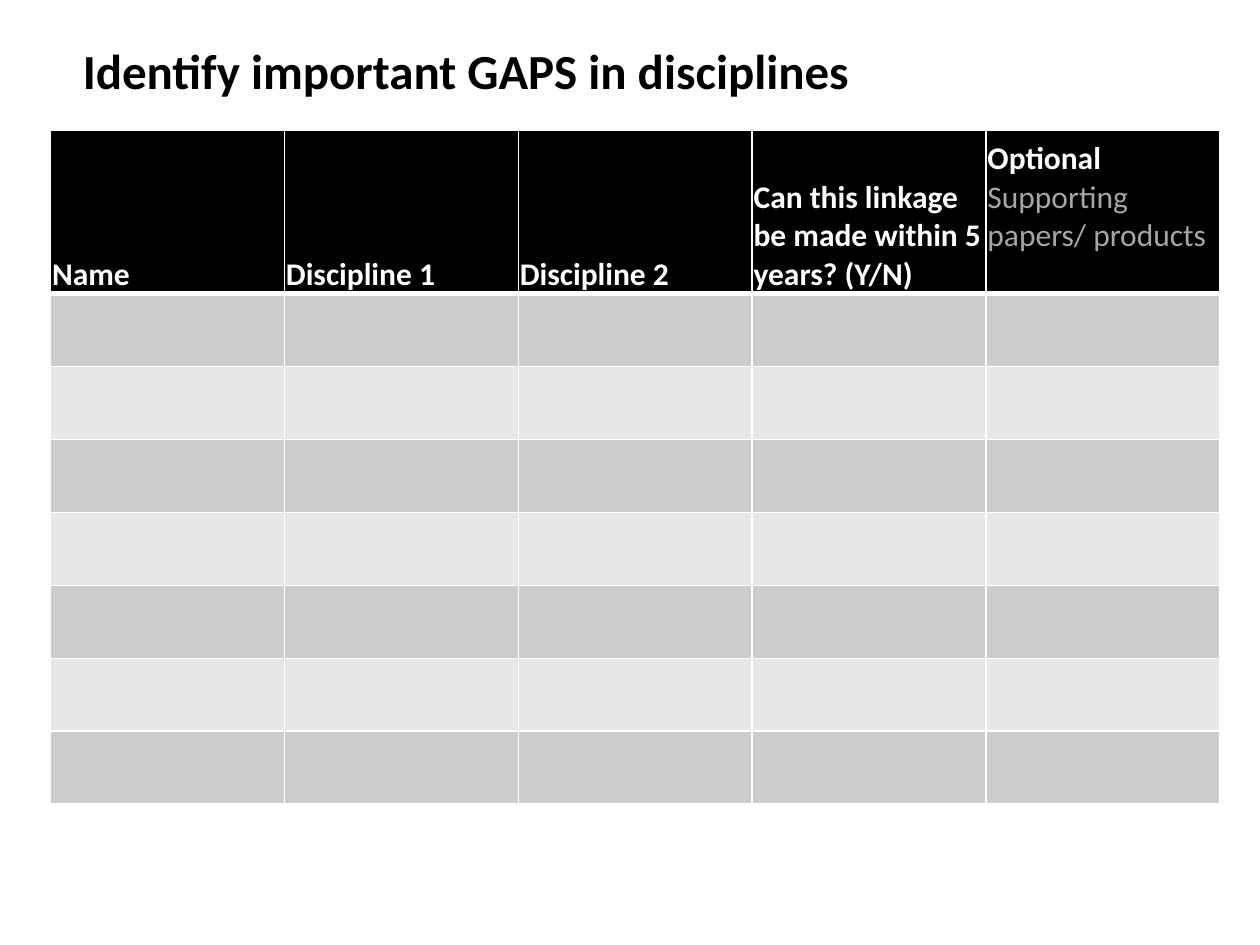
from pptx import Presentation
from pptx.dml.color import RGBColor
from pptx.enum.text import MSO_ANCHOR
from pptx.oxml.ns import qn
from pptx.util import Cm, Pt
from lxml import etree

BOTTOM = MSO_ANCHOR.BOTTOM
FONT = "Calibri"
BLACK, WHITE, GREY = "000000", "FFFFFF", "A6A6A6"
BANDS = ["CCCCCC", "E7E7E7"]
HEADERS = [
    "Name",
    "Discipline 1",
    "Discipline 2",
    "Can this linkage be made within 5 years? (Y/N)",
    "Optional ",
]
BODY_ROWS = 7


def color(value):
    """Return the RGB colour of a hex string."""
    return RGBColor.from_string(value)


def add_text(para, text, size=18, fill=WHITE, bold=True):
    """Append a formatted span of text to a paragraph."""
    span = para.add_run()
    span.text = text
    span.font.name = FONT
    span.font.size = Pt(size)
    span.font.bold = bold
    span.font.color.rgb = color(fill)


def set_border(cell, side, width):
    """Draw a white line on one side of a cell, ahead of its fill."""
    properties = cell._tc.get_or_add_tcPr()
    line = etree.Element(qn(f"a:ln{side}"), w=str(Pt(width)))
    solid = etree.SubElement(line, qn("a:solidFill"))
    etree.SubElement(solid, qn("a:srgbClr"), val=WHITE)
    properties.insert(len(properties) - 1, line)


def style_cell(cell, fill, top=1, bottom=1):
    """Fill a cell and give it white borders."""
    cell.fill.solid()
    cell.fill.fore_color.rgb = color(fill)
    for side, width in zip("LRTB", (1, 1, top, bottom)):
        set_border(cell, side, width)


def fill_header(cell, text):
    """Write a heading at the bottom of a black cell."""
    style_cell(cell, BLACK, bottom=3)
    cell.vertical_anchor = BOTTOM
    cell.margin_left = cell.margin_right = cell.margin_top = Cm(0.03)
    cell.margin_bottom = Cm(0)
    add_text(cell.text_frame.paragraphs[0], text)


def add_title(page, text):
    """Add the slide title."""
    box = page.shapes.add_textbox(Cm(1.42), Cm(0.69), Cm(22.15), Cm(1.45))
    box.text_frame.word_wrap = True
    add_text(box.text_frame.paragraphs[0], text, size=28, fill=BLACK)


def add_gap_table(page):
    """Add the table with a header row and empty banded rows."""
    frame = page.shapes.add_table(
        BODY_ROWS + 1, len(HEADERS), Cm(1.02), Cm(2.62), Cm(23.57), Cm(13.61)
    )
    table = frame.table
    for row in table.rows:
        row.height = Cm(1.47)
    table.rows[0].height = Cm(3.3)
    for column, text in enumerate(HEADERS):
        fill_header(table.cell(0, column), text)
        for row in range(1, BODY_ROWS + 1):
            style_cell(table.cell(row, column), BANDS[(row - 1) % 2], top=3 if row == 1 else 1)
    optional = table.cell(0, len(HEADERS) - 1)
    optional.margin_bottom = Cm(0.78)
    add_text(
        optional.text_frame.paragraphs[0],
        "Supporting papers/ products",
        fill=GREY,
        bold=False,
    )


def main():
    """Build and save the deck."""
    deck = Presentation()
    deck.slide_width, deck.slide_height = Cm(25.4), Cm(19.05)
    page = deck.slides.add_slide(deck.slide_layouts[6])
    add_gap_table(page)
    add_title(page, "Identify important GAPS in disciplines")
    deck.save("out.pptx")


if __name__ == "__main__":
    main()
